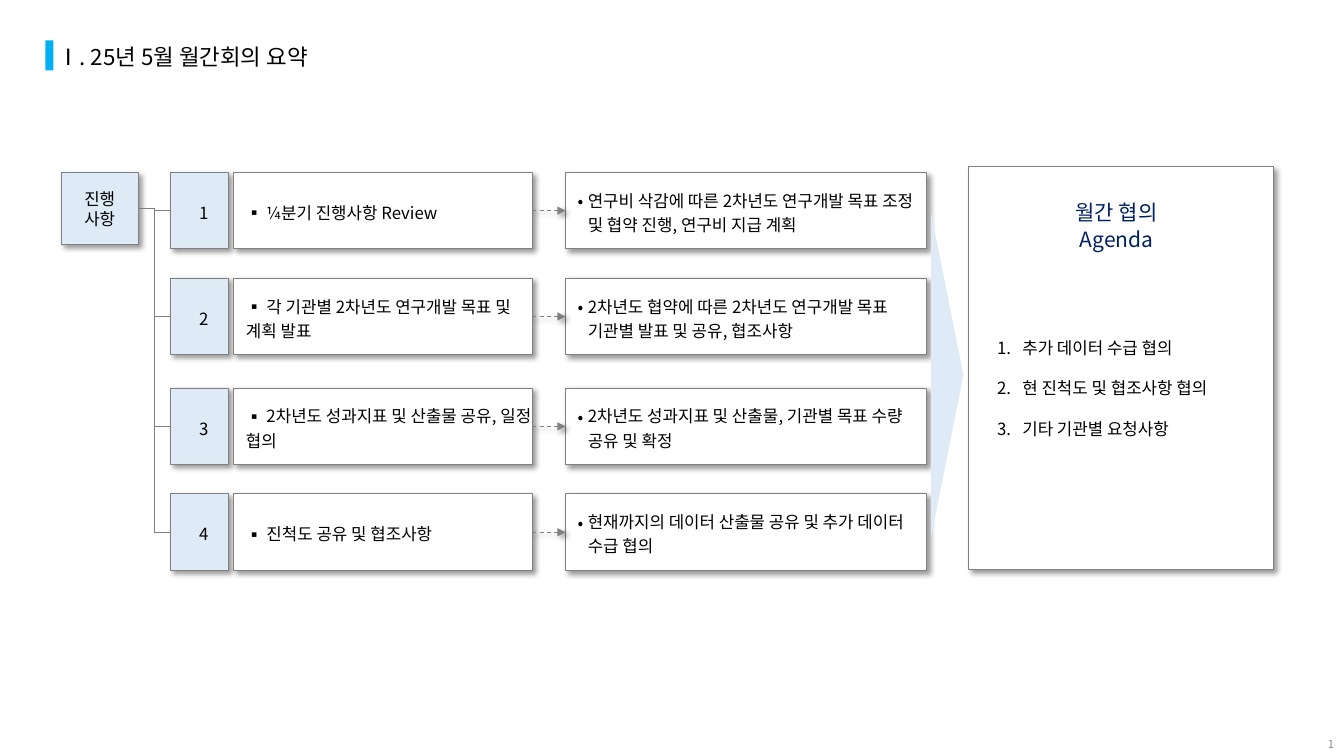
from lxml import etree
from pptx import Presentation
from pptx.dml.color import RGBColor
from pptx.enum import dml, shapes, text
from pptx.oxml import parse_xml
from pptx.oxml.ns import nsdecls, qn
from pptx.util import Inches, Pt

FONT = "Noto Sans CJK KR"
COLOURS = {
    "black": "000000", "white": "FFFFFF", "accent": "00B0F0",
    "pale": "DEEBF7", "grey": "808080", "navy": "002060", "number": "8C8C8C",
}
CENTER = text.PP_ALIGN.CENTER
LEFT = text.PP_ALIGN.LEFT
MIDDLE = text.MSO_ANCHOR.MIDDLE
TOP = text.MSO_ANCHOR.TOP
RECTANGLE = shapes.MSO_SHAPE.RECTANGLE


def style(part, fill=None, inset=0.0, shadow=True):
    """Give a box or connector the grey outline and soft shadow; a fill marks a box."""
    if fill:
        part.fill.solid()
        part.fill.fore_color.rgb = RGBColor.from_string(COLOURS[fill])
        frame = part.text_frame
        frame.word_wrap = True
        frame.vertical_anchor = MIDDLE
        frame.margin_left = Inches(inset)
        frame.margin_top = frame.margin_right = frame.margin_bottom = 0
    part.line.color.rgb = RGBColor.from_string(COLOURS["grey"])
    part.line.width = Pt(0.75)
    effects = etree.SubElement(part._element.spPr, qn("a:effectLst"))
    if shadow:
        effects.append(parse_xml(
            f'<a:outerShdw {nsdecls("a")} blurRad="{Pt(4)}" dist="{Pt(3)}" dir="2700000" '
            'algn="tl" rotWithShape="0"><a:srgbClr val="000000"><a:alpha val="40000"/>'
            '</a:srgbClr></a:outerShdw>'))


def write(paragraph, lines, size=12, colour="black", align=LEFT, spacing=1.0,
          indent=0.0, bullet=None):
    """Fill a paragraph; indent hangs the bullet, and "1." numbers the paragraph."""
    paragraph.alignment = align
    paragraph.line_spacing = spacing
    paragraph.space_before = Pt(0)
    for number, line in enumerate(lines.split("\n")):
        if number:
            paragraph.add_line_break()
        run = paragraph.add_run()
        run.text = line
        run.font.size = Pt(size)
        run.font.color.rgb = RGBColor.from_string(COLOURS[colour])
        run.font.name = FONT
        etree.SubElement(run.font._element, qn("a:ea"), typeface=FONT)
    properties = paragraph._p.get_or_add_pPr()
    properties.set("marL", str(Inches(indent)))
    properties.set("indent", str(-Inches(indent) if bullet else 0))
    if bullet == "1.":
        etree.SubElement(properties, qn("a:buFont"), typeface="+mj-lt")
        etree.SubElement(properties, qn("a:buAutoNum"), type="arabicPeriod")
    elif bullet:
        etree.SubElement(properties, qn("a:buFont"), typeface=FONT)
        etree.SubElement(properties, qn("a:buChar"), char=bullet)
    else:
        etree.SubElement(properties, qn("a:buNone"))


prs = Presentation()
prs.slide_width = Inches(13.33)
prs.slide_height = Inches(7.5)
slide = prs.slides.add_slide(prs.slide_layouts[1])

# Heading
title = slide.shapes.title
title.left, title.top, title.width, title.height = map(Inches, (0.47, 0.38, 2.98, 0.37))
title.text_frame.word_wrap = False
title.text_frame.auto_size = text.MSO_AUTO_SIZE.NONE
title.text_frame.vertical_anchor = TOP
write(title.text_frame.paragraphs[0], "Ⅰ. 25년 5월 월간회의 요약", size=16)

title_bar = slide.shapes.add_shape(
    RECTANGLE, Inches(0.45), Inches(0.4), Inches(0.08), Inches(0.3))
title_bar.shadow.inherit = False
title_bar.fill.solid()
title_bar.fill.fore_color.rgb = RGBColor.from_string(COLOURS["accent"])
title_bar.line.fill.background()

# Progress items
progress = slide.shapes.add_shape(
    RECTANGLE, Inches(0.61), Inches(1.71), Inches(0.76), Inches(0.72))
style(progress, "pale")
write(progress.text_frame.paragraphs[0], "진행", align=CENTER)
write(progress.text_frame.add_paragraph(), "사항", align=CENTER)

items = [
    (1.71, " ¼분기 진행사항 Review",
     ["연구비 삭감에 따른 2차년도 연구개발 목표 조정", "및 협약 진행, 연구비 지급 계획"]),
    (2.76, " 각 기관별 2차년도 연구개발 목표 및 계획 발표",
     ["2차년도 협약에 따른 2차년도 연구개발 목표 기관별 발표 및 공유, 협조사항"]),
    (3.85, " 2차년도 성과지표 및 산출물 공유, 일정 협의",
     ["2차년도 성과지표 및 산출물, 기관별 목표 수량 공유 및 확정"]),
    (4.9, " 진척도 공유 및 협조사항",
     ["현재까지의 데이터 산출물 공유 및 추가 데이터 수급 협의"]),
]
for number, (top, topic, details) in enumerate(items, start=1):
    number_box, topic_box, detail_box = [
        slide.shapes.add_shape(RECTANGLE, Inches(left), Inches(top), Inches(width), Inches(0.76))
        for left, width in ((1.69, 0.58), (2.32, 2.96), (5.61, 3.58))]

    style(number_box, "pale", inset=0.08)
    write(number_box.text_frame.paragraphs[0], str(number), align=CENTER, spacing=1.2)

    style(topic_box, "white", inset=0.12)
    write(topic_box.text_frame.paragraphs[0], topic, spacing=1.2, bullet="▪")

    style(detail_box, "white", inset=0.12)
    write(detail_box.text_frame.paragraphs[0], details[0], spacing=1.2, indent=0.1, bullet="•")
    for continuation in details[1:]:
        write(detail_box.text_frame.add_paragraph(), continuation, spacing=1.2, indent=0.1)

    branch = slide.shapes.add_connector(shapes.MSO_CONNECTOR.ELBOW, 0, 0, 0, 0)
    branch.begin_connect(progress, 3)
    branch.end_connect(number_box, 1)
    style(branch, shadow=False)

    arrow = slide.shapes.add_connector(shapes.MSO_CONNECTOR.STRAIGHT, 0, 0, 0, 0)
    arrow.begin_connect(topic_box, 3)
    arrow.end_connect(detail_box, 1)
    style(arrow)
    arrow.line.dash_style = dml.MSO_LINE.DASH
    etree.SubElement(arrow._element.spPr.get_or_add_ln(), qn("a:tailEnd"), type="triangle")

# Agenda
agenda = slide.placeholders[1]
agenda.left, agenda.top, agenda.width, agenda.height = map(Inches, (9.61, 1.65, 3.02, 4))
style(agenda, "white", inset=0.28)
agenda.text_frame.auto_size = text.MSO_AUTO_SIZE.NONE
agenda.text_frame.vertical_anchor = TOP
agenda.text_frame.margin_top = Inches(1.5)
topics = ["추가 데이터 수급 협의", "현 진척도 및 협조사항 협의", "기타 기관별 요청사항"]
for position, topic in enumerate(topics):
    paragraph = (agenda.text_frame.add_paragraph() if position
                 else agenda.text_frame.paragraphs[0])
    write(paragraph, topic, spacing=2.0, indent=0.25, bullet="1.")

agenda_heading = slide.shapes.add_textbox(
    Inches(10.27), Inches(1.93), Inches(1.61), Inches(0.6))
heading_frame = agenda_heading.text_frame
heading_frame.word_wrap = True
heading_frame.margin_left = heading_frame.margin_right = Inches(0.02)
heading_frame.margin_top = heading_frame.margin_bottom = Inches(0.02)
write(heading_frame.paragraphs[0], "월간 협의\nAgenda", size=15, colour="navy",
      align=CENTER, spacing=1.1)

pointer = slide.shapes.add_shape(
    shapes.MSO_SHAPE.ISOSCELES_TRIANGLE, Inches(7.79), Inches(3.56), Inches(3.21), Inches(0.32))
pointer.rotation = 90
pointer.shadow.inherit = False
pointer.fill.solid()
pointer.fill.fore_color.rgb = RGBColor.from_string(COLOURS["pale"])
pointer.line.fill.background()

# Page number
page_number = slide.shapes.add_textbox(
    Inches(12.35), Inches(7.26), Inches(0.98), Inches(0.24))
page_number.text_frame.word_wrap = True
page_number.text_frame.vertical_anchor = MIDDLE
write(page_number.text_frame.paragraphs[0], "1", size=8, colour="number",
      align=text.PP_ALIGN.RIGHT)

prs.save("out.pptx")
